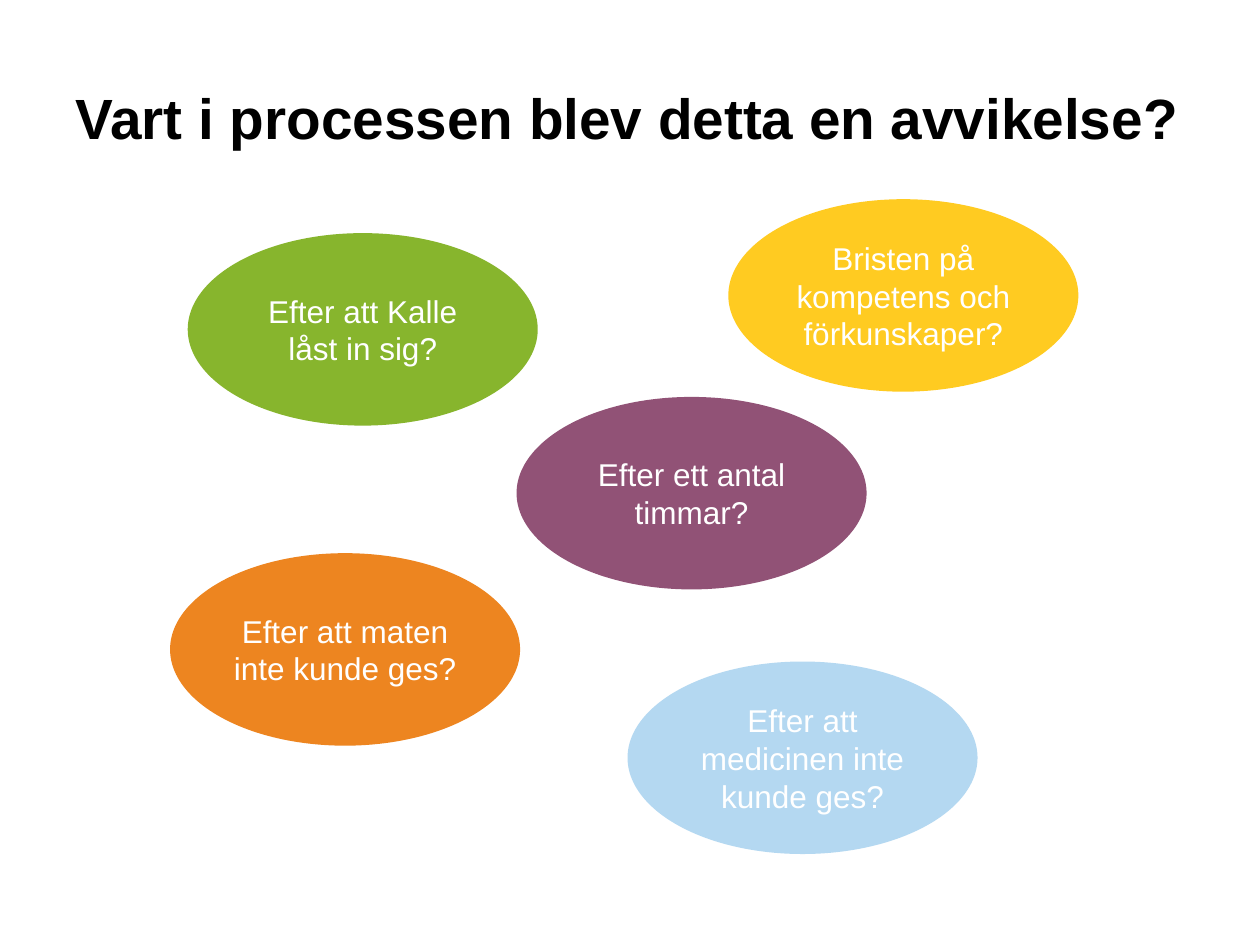
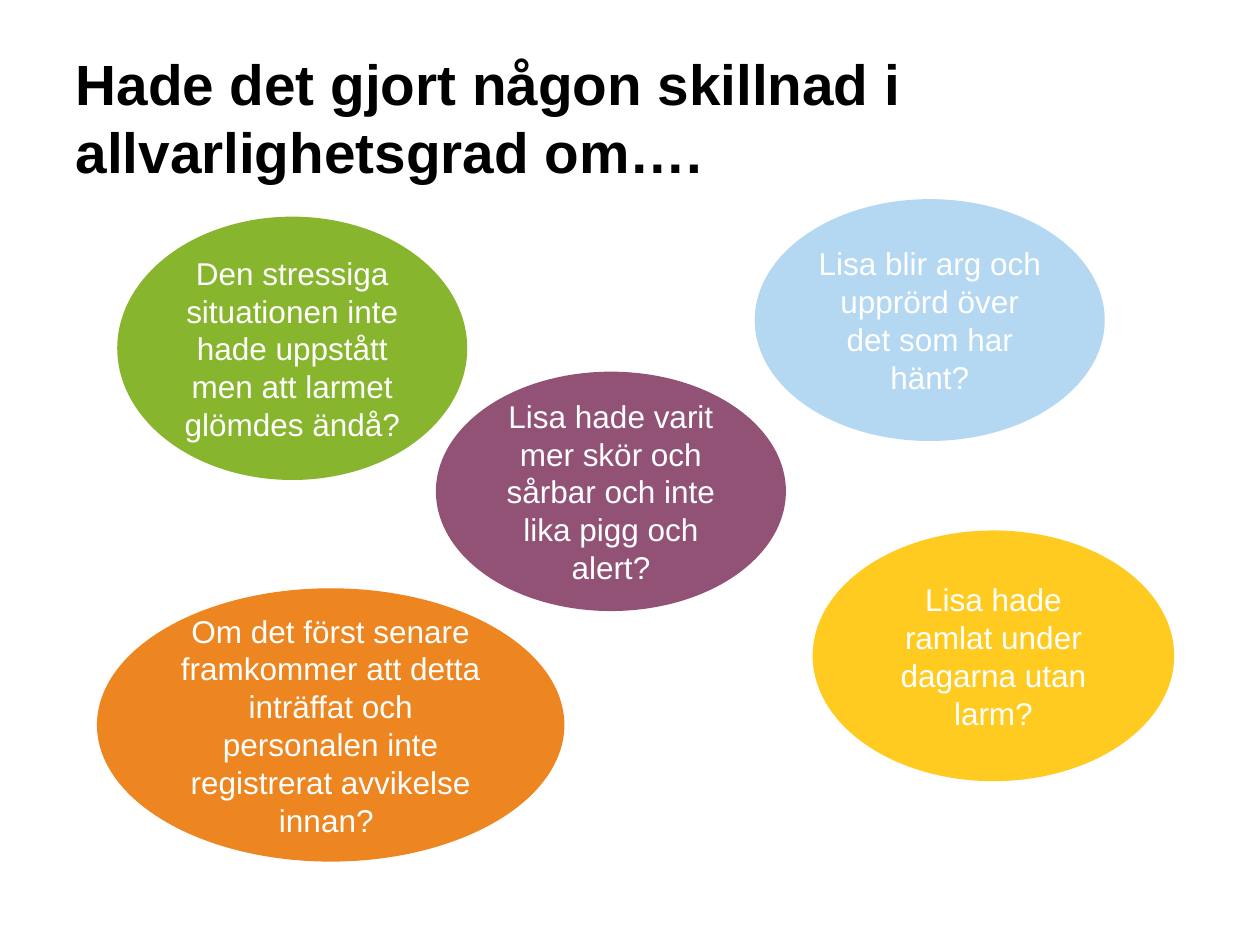
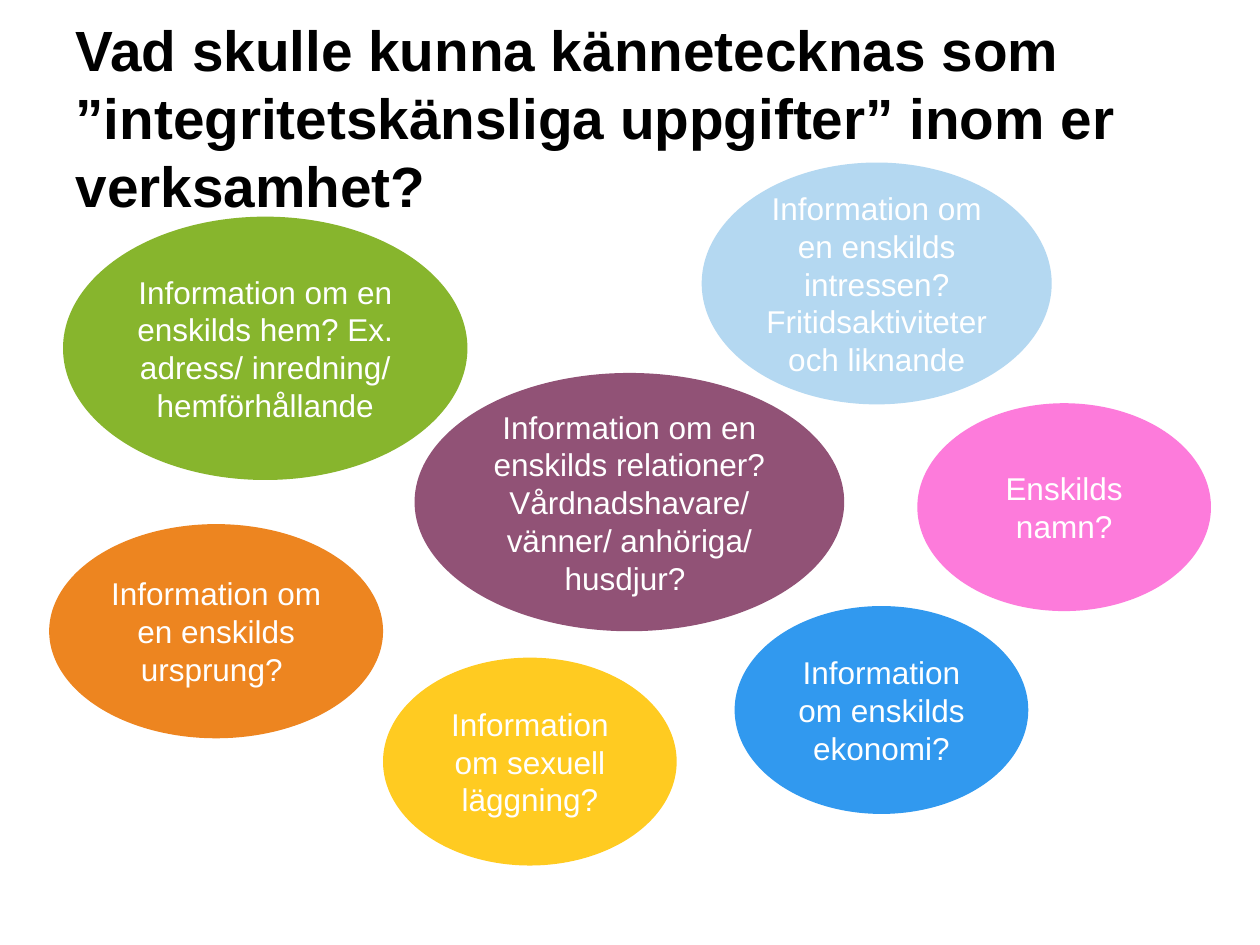
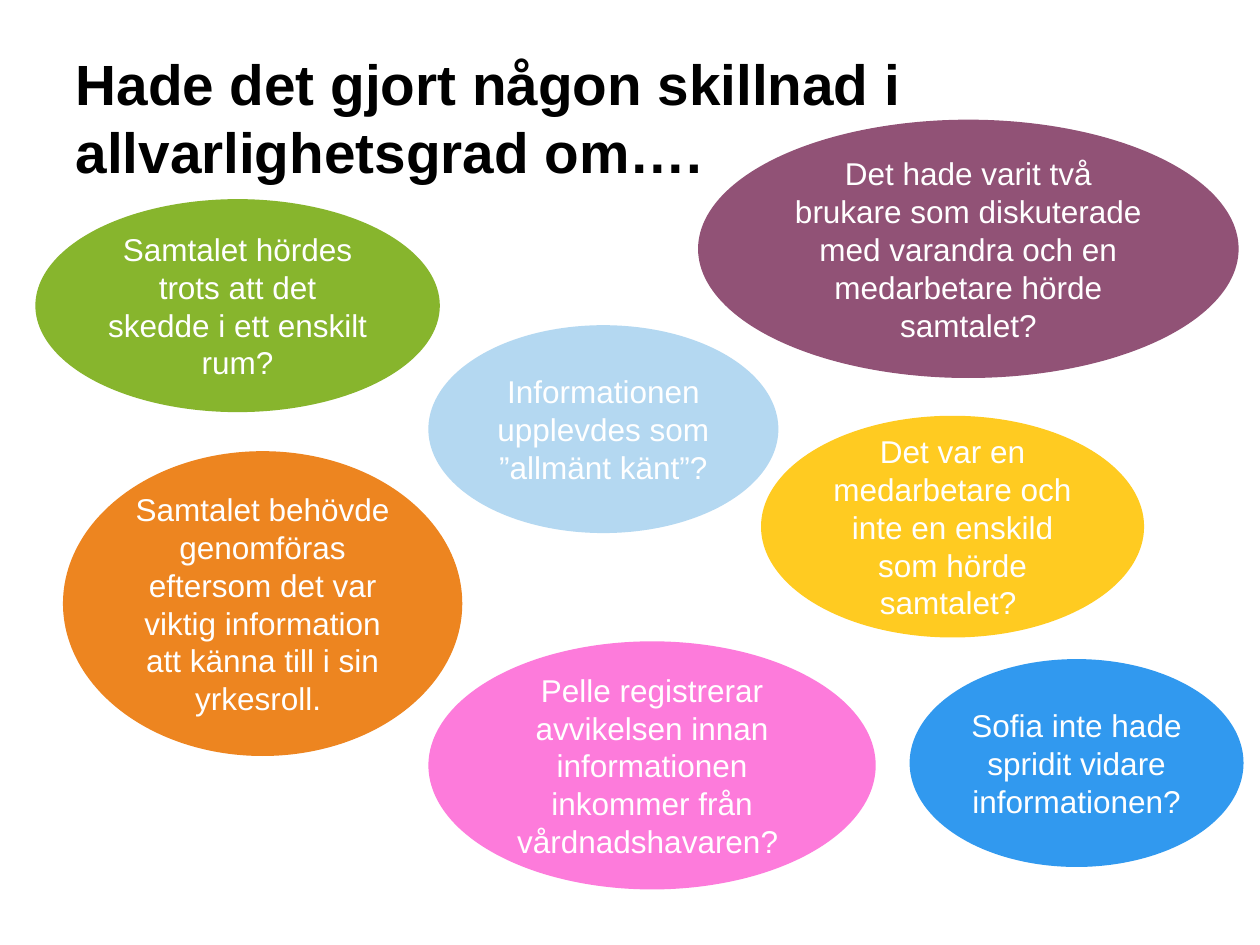
from dataclasses import dataclass

from pptx import Presentation
from pptx.dml.color import RGBColor
from pptx.enum.shapes import MSO_SHAPE as Preset
from pptx.enum.text import MSO_ANCHOR as Anchor, MSO_AUTO_SIZE as AutoSize, PP_ALIGN as Align
from pptx.slide import Slide
from pptx.text.text import TextFrame
from pptx.util import Pt


# Theme: colours, type sizes and shared geometry
@dataclass(frozen=True)
class Theme:
    font: str = "Arial"
    title_size: float = 32.4
    bubble_size: float = 18
    title_box: tuple = (36, 21.6, 648, 90)
    black: str = "000000"
    white: str = "FFFFFF"
    purple: str = "915276"
    orange: str = "ED8520"
    green: str = "87B52D"
    yellow: str = "FFCB21"
    sky: str = "B4D8F1"
    blue: str = "3199EF"
    pink: str = "FD7BDB"


THEME = Theme()


@dataclass(frozen=True)
class Bubble:
    text: str
    fill: str
    left: float
    top: float
    width: float = 200
    height: float = 110


@dataclass(frozen=True)
class Page:
    title: str
    bubbles: tuple[Bubble, ...]


SEVERITY_TITLE = "Hade det gjort någon skillnad i allvarlighetsgrad om…."

# Content, bubbles listed from back to front
PAGES = (
    Page("Vart i processen blev detta en avvikelse?", (
        Bubble("Efter ett antal timmar?", THEME.purple, 295.2, 226.8),
        Bubble("Efter att maten inte kunde ges?", THEME.orange, 97.2, 316.1),
        Bubble("Efter att Kalle låst in sig?", THEME.green, 107.3, 133.2),
        Bubble("Bristen på kompetens och förkunskaper?", THEME.yellow, 416.2, 113.8),
        Bubble("Efter att medicinen inte kunde ges?", THEME.sky, 358.6, 378),
    )),
    Page(SEVERITY_TITLE, (
        Bubble("Lisa hade varit mer skör och sårbar och inte lika pigg och alert?",
               THEME.purple, 249.1, 212.4, height=136.8),
        Bubble("Om det först senare framkommer att detta inträffat och personalen inte "
               "registrerat avvikelse innan? ", THEME.orange, 55.4, 336.2, 267.1, 156.2),
        Bubble("Den stressiga situationen inte hade uppstått men att larmet glömdes ändå?",
               THEME.green, 67, 123.8, height=150.5),
        Bubble("Lisa hade ramlat under dagarna utan larm?",
               THEME.yellow, 464.4, 303.1, 206.6, 143.3),
        Bubble("Lisa blir arg och upprörd över det som har hänt?",
               THEME.sky, 431.3, 113.8, height=138.2),
    )),
    Page("Vad skulle kunna kännetecknas som ”integritetskänsliga uppgifter” "
         "inom er verksamhet?", (
        Bubble("Information om en enskilds relationer? Vårdnadshavare/ vänner/ "
               "anhöriga/ husdjur? ", THEME.purple, 236.9, 213.1, 245.5, 147.6),
        Bubble("Information om en enskilds ursprung? ",
               THEME.orange, 28.1, 299.5, 190.8, 122.4),
        Bubble("Information om en enskilds hem? Ex. adress/ inredning/\nhemförhållande",
               THEME.green, 36, 123.8, 231.1, 150.5),
        Bubble("Information om sexuell läggning?",
               THEME.yellow, 218.9, 375.8, 167.8, 118.8),
        Bubble("Information om en enskilds intressen? Fritidsaktiviteter och liknande",
               THEME.sky, 401, 92.9, height=138.2),
        Bubble("Information om enskilds ekonomi?",
               THEME.blue, 419.8, 346.3, 167.8, 118.8),
        Bubble("Enskilds namn?", THEME.pink, 524.2, 230.4, 167.8, 118.8),
    )),
    Page(SEVERITY_TITLE, (
        Bubble("Det hade varit två brukare som diskuterade med varandra och en "
               "medarbetare hörde samtalet?", THEME.purple, 398.9, 68.4, 308.9, 147.6),
        Bubble("Samtalet behövde genomföras eftersom det var viktig information att "
               "känna till i sin yrkesroll. ", THEME.orange, 36, 257.8, 228.2, 174.2),
        Bubble("Samtalet hördes trots att det skedde i ett enskilt rum?",
               THEME.green, 20.2, 113.8, 231.1, 121.7),
        Bubble("Det var en medarbetare och inte en enskild som hörde samtalet? ",
               THEME.yellow, 434.9, 237.6, 218.9, 126.7),
        Bubble("Informationen upplevdes som ”allmänt känt”?",
               THEME.sky, 244.8, 185.8, height=118.8),
        Bubble("Pelle registrerar avvikelsen innan informationen inkommer från "
               "vårdnadshavaren? ", THEME.pink, 244.8, 366.5, 255.6, 141.8),
        Bubble("Sofia inte hade spridit vidare informationen?",
               THEME.blue, 519.8, 376.6, 190.8, 118.8),
    )),
)


def write_text(frame: TextFrame, text: str, size: float, color: str,
               align: Align, bold: bool = False) -> None:
    """Fill a vertically centred frame and format every run."""
    frame.text = text
    frame.word_wrap = True
    frame.auto_size = AutoSize.NONE
    frame.vertical_anchor = Anchor.MIDDLE
    for para in frame.paragraphs:
        para.alignment = align
        for span in para.runs:
            span.font.name = THEME.font
            span.font.size = Pt(size)
            span.font.bold = bold
            span.font.color.rgb = RGBColor.from_string(color)


def draw_title(slide: Slide, text: str) -> None:
    title = slide.shapes.title
    title.left, title.top, title.width, title.height = map(Pt, THEME.title_box)
    write_text(title.text_frame, text, THEME.title_size, THEME.black, Align.LEFT, bold=True)


def draw_bubble(slide: Slide, bubble: Bubble) -> None:
    oval = slide.shapes.add_shape(Preset.OVAL, Pt(bubble.left), Pt(bubble.top),
                                  Pt(bubble.width), Pt(bubble.height))
    oval.shadow.inherit = False
    oval.fill.solid()
    oval.fill.fore_color.rgb = RGBColor.from_string(bubble.fill)
    oval.line.fill.background()
    write_text(oval.text_frame, bubble.text, THEME.bubble_size, THEME.white, Align.CENTER)


def main() -> None:
    deck = Presentation()
    deck.slide_width, deck.slide_height = Pt(720), Pt(540)
    title_only = deck.slide_layouts.get_by_name("Title Only")
    for page in PAGES:
        slide = deck.slides.add_slide(title_only)
        draw_title(slide, page.title)
        for bubble in page.bubbles:
            draw_bubble(slide, bubble)
    deck.save("out.pptx")


if __name__ == "__main__":
    main()
